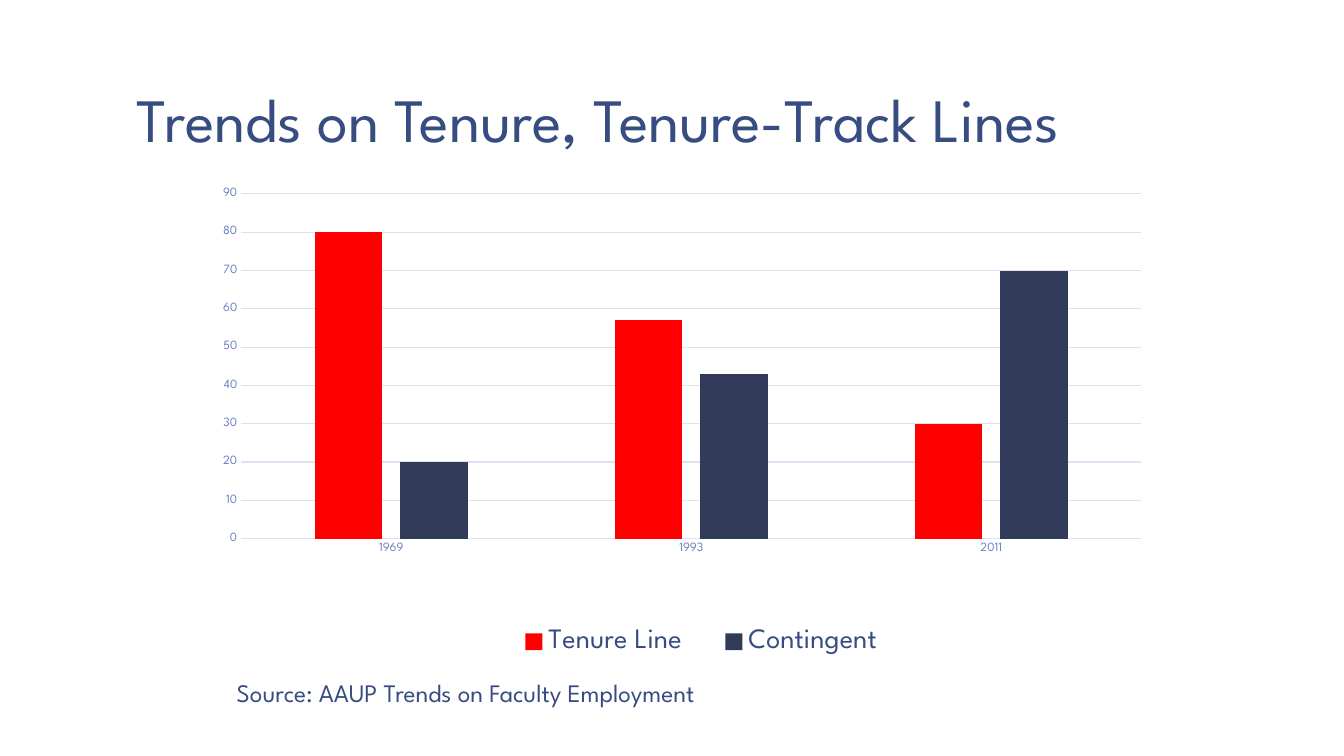
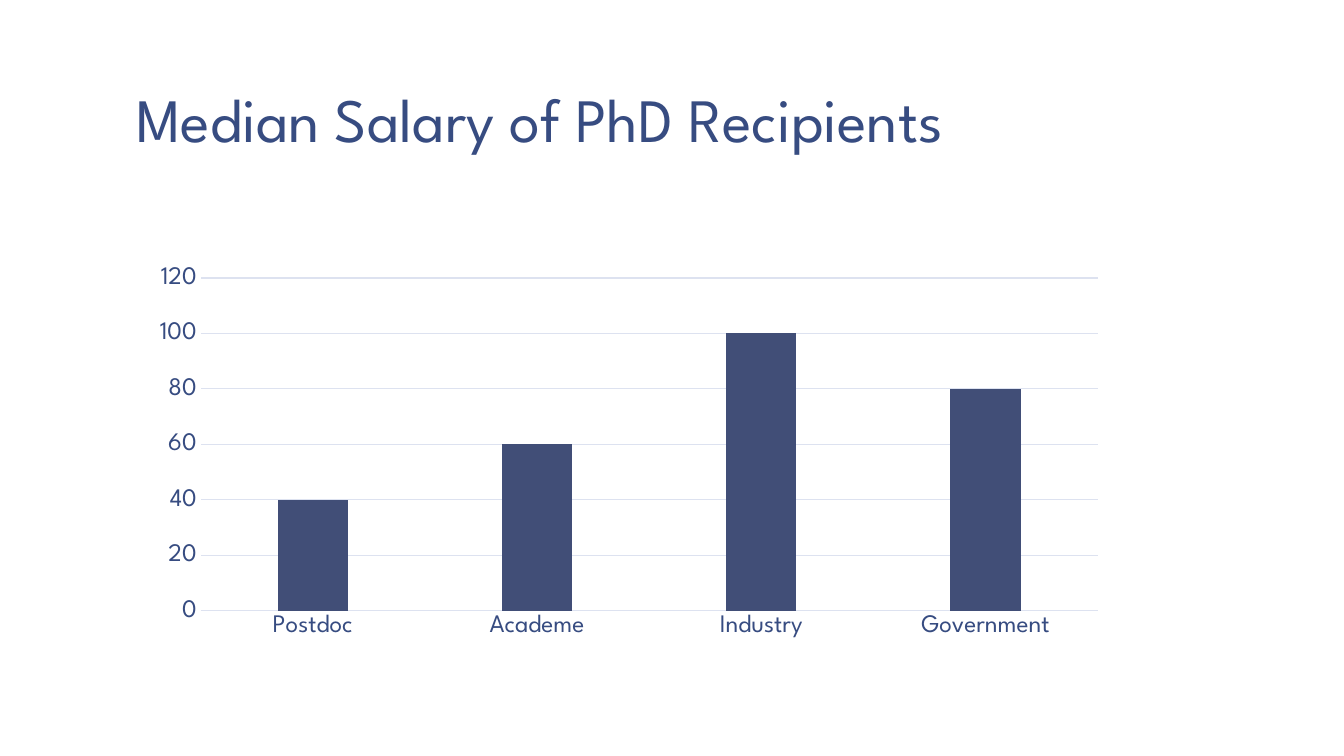
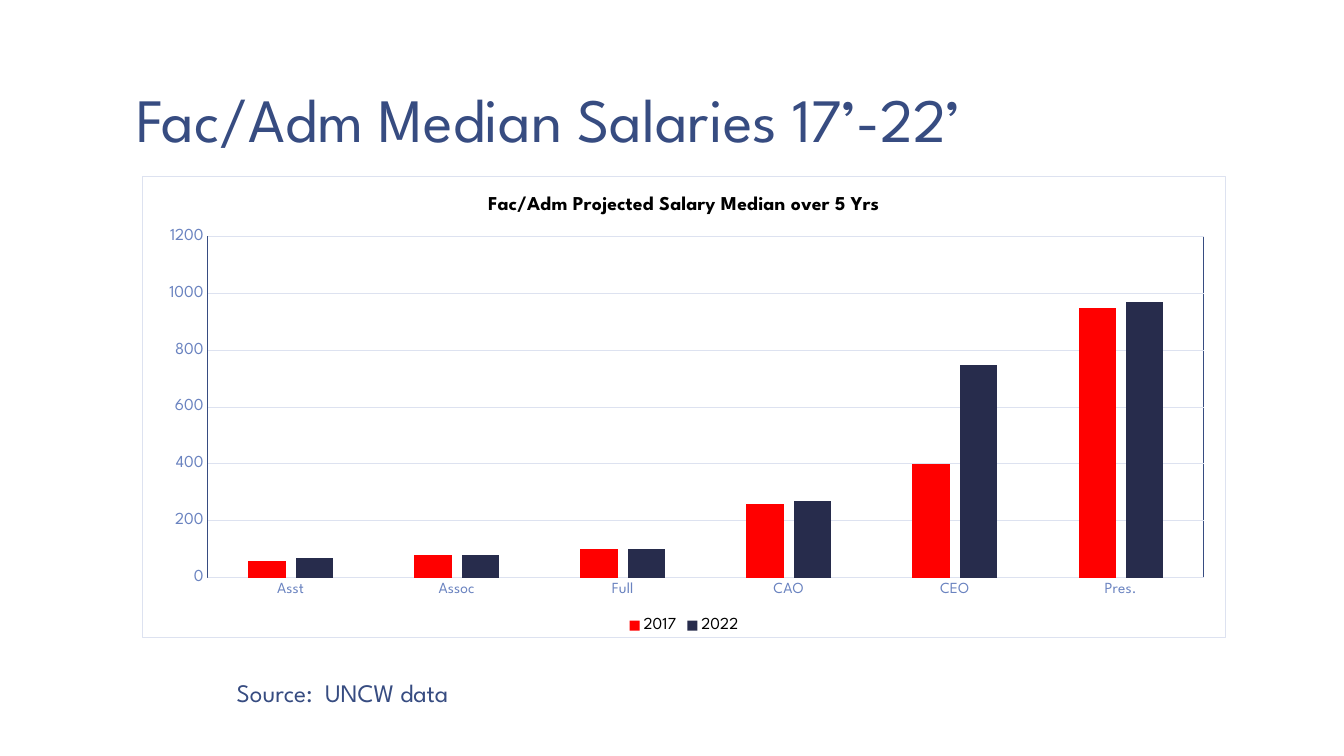
import pptx
import pptx.chart.data
import pptx.dml.color
import pptx.enum.chart
import pptx.enum.text
import pptx.oxml
import pptx.oxml.ns
import pptx.util

Inches = pptx.util.Inches
Pt = pptx.util.Pt
RGBColor = pptx.dml.color.RGBColor
qn = pptx.oxml.ns.qn

# Shared style
FONT = "League Spartan"
NAVY = RGBColor(0x37, 0x4C, 0x81)
SOFT_BLUE = RGBColor(0x6A, 0x83, 0xC0)
PALE_BLUE = RGBColor(0xDD, 0xE2, 0xF0)
RED = RGBColor(0xFF, 0x00, 0x00)
DARK_SLATE = RGBColor(0x31, 0x3A, 0x59)
SLATE = RGBColor(0x41, 0x4E, 0x77)
MIDNIGHT = RGBColor(0x27, 0x2C, 0x4C)
BLACK = RGBColor(0, 0, 0)
HAIRLINE = Pt(0.75)
TITLE_BOX = (1.22, 0.08, 11.11, 1.53)


def style_font(font, size, color, bold=False):
    font.name = FONT
    font.size = Pt(size)
    font.color.rgb = color
    font.bold = bold


def place(shape, box):
    shape.left, shape.top, shape.width, shape.height = map(Inches, box)


def add_titled_slide(deck, heading):
    slide = deck.slides.add_slide(deck.slide_layouts[5])
    title = slide.shapes.title
    place(title, TITLE_BOX)
    frame = title.text_frame
    frame.text = heading
    frame.word_wrap = True
    frame.vertical_anchor = pptx.enum.text.MSO_ANCHOR.BOTTOM
    frame.margin_left = frame.margin_right = Inches(0.13)
    frame.margin_top = frame.margin_bottom = Inches(0.07)
    line = frame.paragraphs[0]
    line.alignment = pptx.enum.text.PP_ALIGN.LEFT
    line.line_spacing = 0.85
    style_font(line.font, 44, NAVY)
    return slide


def add_source(slide, text, box):
    source = slide.shapes.add_textbox(*map(Inches, box))
    source.text_frame.word_wrap = False
    source.text_frame.text = text
    style_font(source.text_frame.paragraphs[0].font, 18, NAVY)


# Chart details that need XML
def set_layout(parent, index, fractions, inner=False):
    """Pin a chart part to x, y, width, height as fractions of the chart."""
    for old in parent.findall(qn("c:layout")):
        parent.remove(old)
    target = '<c:layoutTarget val="inner"/>' if inner else ""
    modes = '<c:xMode val="edge"/><c:yMode val="edge"/>'
    sizes = "".join(f'<c:{key} val="{value}"/>' for key, value in zip("xywh", fractions))
    parent.insert(index, pptx.oxml.parse_xml(
        f'<c:layout {pptx.oxml.ns.nsdecls("c")}><c:manualLayout>'
        f"{target}{modes}{sizes}</c:manualLayout></c:layout>"))


def outline(color):
    """Unfilled shape properties with a hairline, or with no line."""
    paint = f'<a:solidFill><a:srgbClr val="{color}"/></a:solidFill>' if color else "<a:noFill/>"
    return pptx.oxml.parse_xml(
        f'<c:spPr {pptx.oxml.ns.nsdecls("c", "a")}><a:noFill/>'
        f'<a:ln w="{HAIRLINE}">{paint}</a:ln></c:spPr>')


def style_axis(axis, size, color):
    axis.major_tick_mark = axis.minor_tick_mark = pptx.enum.chart.XL_TICK_MARK.NONE
    style_font(axis.tick_labels.font, size, color)


def add_columns(slide, box, categories, series, top, step, plot_area,
                label_sizes, label_color, border=None, plot_border=None):
    """Clustered columns; series holds (name, values, color)."""
    data = pptx.chart.data.CategoryChartData(number_format="0")
    data.categories = categories
    for name, values, _ in series:
        data.add_series(name, values)
    chart = slide.shapes.add_chart(
        pptx.enum.chart.XL_CHART_TYPE.COLUMN_CLUSTERED, *map(Inches, box), data).chart
    style_font(chart.font, 10, NAVY)
    chart.has_title = False
    chart.has_legend = False

    # Columns
    plot = chart.plots[0]
    plot.gap_width = 219
    plot.overlap = -27
    plot.vary_by_categories = False
    for columns, (_, _, color) in zip(plot.series, series):
        columns.format.fill.solid()
        columns.format.fill.fore_color.rgb = color

    # Axes
    category_size, value_size = label_sizes
    style_axis(chart.category_axis, category_size, label_color)
    style_axis(chart.value_axis, value_size, label_color)
    chart.value_axis.minimum_scale = 0
    chart.value_axis.maximum_scale = top
    chart.value_axis.major_unit = step
    chart.value_axis.format.line.fill.background()
    chart.value_axis.has_major_gridlines = True
    for rule in (chart.category_axis, chart.value_axis.major_gridlines):
        rule.format.line.color.rgb = PALE_BLUE
        rule.format.line.width = HAIRLINE

    # Plot area and frame
    chart_space = chart._chartSpace
    plot_element = chart_space.find(qn("c:chart")).find(qn("c:plotArea"))
    set_layout(plot_element, 0, plot_area, inner=True)
    plot_element.append(outline(plot_border))
    chart_space.find(qn("c:chart")).addnext(outline(border))
    return chart


def add_legend(chart, size, color, fractions=None):
    chart.has_legend = True
    legend = chart.legend
    legend.position = pptx.enum.chart.XL_LEGEND_POSITION.BOTTOM
    legend.include_in_layout = False
    style_font(legend.font, size, color)
    if fractions:
        set_layout(legend._element, 1, fractions)


def add_chart_title(chart, text):
    chart.has_title = True
    chart.chart_title.include_in_layout = False
    chart.chart_title.text_frame.text = text
    style_font(chart.chart_title.text_frame.paragraphs[0].font, 14, BLACK, bold=True)


# Slides
def build_tenure_trends(deck):
    slide = add_titled_slide(deck, "Trends on Tenure, Tenure-Track Lines")
    chart = add_columns(
        slide, (1.5, 1.83, 9.92, 4.75), ["1969", "1993", "2011"],
        [("Tenure Line", (80, 57, 30), RED), ("Contingent", (20, 43, 70), DARK_SLATE)],
        top=90, step=10, plot_area=(0.09, 0.02, 0.9, 0.72),
        label_sizes=(9, 9), label_color=SOFT_BLUE)
    add_legend(chart, 20, NAVY, (0.34, 0.91, 0.42, 0.09))
    add_source(slide, "Source: AAUP Trends on Faculty Employment", (2.25, 6.67, 5.67, 0.71))


def build_phd_salaries(deck):
    slide = add_titled_slide(deck, "Median Salary of PhD Recipients")
    add_columns(
        slide, (1.41, 1.59, 9.67, 5.08), ["Postdoc", "Academe", "Industry", "Government"],
        [("Series 1", (40, 60, 100, 80), SLATE)],
        top=120, step=20, plot_area=(0.06, 0.23, 0.92, 0.65),
        label_sizes=(18, 18), label_color=NAVY)


def build_staff_salaries(deck):
    slide = add_titled_slide(deck, "Fac/Adm Median Salaries 17’-22’")
    add_source(slide, "Source:  UNCW data", (2.25, 6.67, 2.73, 0.71))
    chart = add_columns(
        slide, (1.41, 1.75, 10.75, 4.58), ["Asst", "Assoc", "Full", "CAO", "CEO", "Pres."],
        [("2017", (60, 80, 100, 260, 400, 950), RED),
         ("2022", (70, 80, 100, 270, 750, 970), MIDNIGHT)],
        top=1200, step=200, plot_area=(0.06, 0.13, 0.92, 0.74),
        label_sizes=(11, 12), label_color=SOFT_BLUE,
        border=PALE_BLUE, plot_border=NAVY)
    add_chart_title(chart, "Fac/Adm Projected Salary Median over 5 Yrs")
    add_legend(chart, 12, BLACK)


def main():
    deck = pptx.Presentation()
    deck.slide_width = Inches(13.33)
    deck.slide_height = Inches(7.5)
    build_tenure_trends(deck)
    build_phd_salaries(deck)
    build_staff_salaries(deck)
    deck.save("out.pptx")


if __name__ == "__main__":
    main()
